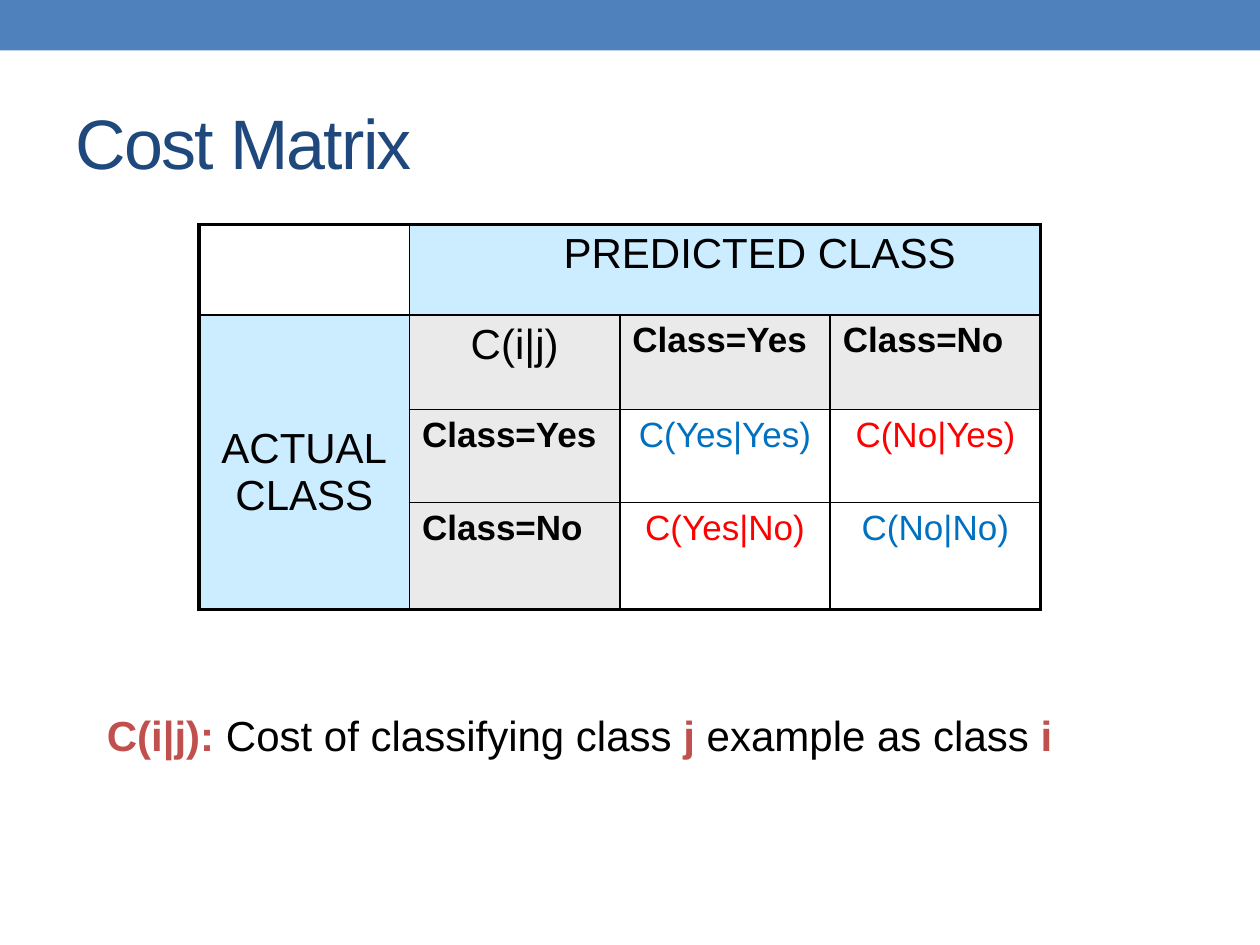
from lxml import etree
from pptx import Presentation
from pptx import util as u
from pptx.dml.color import RGBColor
from pptx.enum import shapes, text
from pptx.oxml import ns

BAND_BLUE = RGBColor(0x4F, 0x81, 0xBD)
TITLE_BLUE = RGBColor(0x1F, 0x49, 0x7D)
ACCENT_RED = RGBColor(0xC0, 0x50, 0x4D)
PALE_BLUE = RGBColor(0xCC, 0xEC, 0xFF)
PALE_GRAY = RGBColor(0xEA, 0xEA, 0xEA)
BLUE = RGBColor(0x00, 0x70, 0xC0)
RED = RGBColor(0xFF, 0x00, 0x00)
BLACK = RGBColor(0, 0, 0)
WHITE = RGBColor(0xFF, 0xFF, 0xFF)
CENTER = text.PP_ALIGN.CENTER
LEFT = text.PP_ALIGN.LEFT


class SlideBuilder:
    font = "Arial"
    inner_line = 1
    outer_line = 2.25

    def __init__(self, presentation):
        self.slide = presentation.slides.add_slide(presentation.slide_layouts[5])

    def box(self, left, top, width, height):
        return [u.Inches(value) for value in (left, top, width, height)]

    def run(self, paragraph, words, size, color=BLACK, bold=False):
        run = paragraph.add_run()
        run.text = words
        run.font.name = self.font
        run.font.size = u.Pt(size)
        run.font.bold = bold
        run.font.color.rgb = color
        return run

    def band(self, place, color):
        shape = self.slide.shapes.add_shape(shapes.MSO_SHAPE.RECTANGLE, *self.box(*place))
        shape.shadow.inherit = False
        shape.fill.solid()
        shape.fill.fore_color.rgb = color
        shape.line.fill.background()

    def title(self, words, place):
        shape = self.slide.shapes.title
        shape.left, shape.top, shape.width, shape.height = self.box(*place)
        shape.text_frame.vertical_anchor = text.MSO_ANCHOR.MIDDLE
        paragraph = shape.text_frame.paragraphs[0]
        paragraph.alignment = LEFT
        run = self.run(paragraph, words, 40, TITLE_BLUE)
        run.font._element.set("spc", "-100")

    def text_box(self, place, parts):
        shape = self.slide.shapes.add_textbox(*self.box(*place))
        shape.text_frame.word_wrap = True
        paragraph = shape.text_frame.paragraphs[0]
        for words, color, bold in parts:
            self.run(paragraph, words, 24, color, bold)

    def table(self, place, column_widths, row_heights):
        frame = self.slide.shapes.add_table(
            len(row_heights), len(column_widths), *self.box(*place))
        table = frame.table
        table.first_row = table.horz_banding = False
        for column, width in zip(table.columns, column_widths):
            column.width = u.Inches(width)
        for row, height in zip(table.rows, row_heights):
            row.height = u.Inches(height)
        return table

    def cell(self, cell, words="", fill=WHITE, size=20, color=BLACK, bold=False, align=CENTER):
        cell.fill.solid()
        cell.fill.fore_color.rgb = fill
        paragraph = cell.text_frame.paragraphs[0]
        paragraph.alignment = align
        paragraph.space_after = u.Pt(4)
        for index, line in enumerate(words.split("\n")):
            if index:
                paragraph.add_line_break()
            if line:
                self.run(paragraph, line, size, color, bold)

    def borders(self, table):
        last_row, last_column = len(table.rows), len(table.columns)
        for row in range(last_row):
            for column in range(last_column):
                cell = table.cell(row, column)
                outer = {
                    "lnL": column == 0,
                    "lnR": column + cell.span_width == last_column,
                    "lnT": row == 0,
                    "lnB": row + cell.span_height == last_row,
                }
                edges = [edge for edge in outer if outer[edge] or not cell.is_spanned]
                properties = cell._tc.get_or_add_tcPr()
                for index, edge in enumerate(edges):
                    width = self.outer_line if outer[edge] else self.inner_line
                    line = etree.Element(ns.qn(f"a:{edge}"), w=str(u.Pt(width)))
                    fill = etree.SubElement(line, ns.qn("a:solidFill"))
                    etree.SubElement(fill, ns.qn("a:srgbClr"), val=str(BLACK))
                    properties.insert(index, line)


def add_cost_matrix(builder):
    table = builder.table((1.58, 1.78, 6.67, 3.06), [1.67] * 4, [0.72, 0.75, 0.74, 0.85])
    predicted, actual = table.cell(0, 1), table.cell(1, 0)
    predicted.merge(table.cell(0, 3))
    actual.merge(table.cell(3, 0))
    builder.cell(table.cell(0, 0))
    builder.cell(predicted, "PREDICTED CLASS", PALE_BLUE, 24)
    predicted.margin_left = u.Inches(0.65)
    builder.cell(actual, "ACTUAL\nCLASS", PALE_BLUE, 24)
    actual.margin_top = u.Inches(0.88)
    builder.cell(table.cell(1, 1), "C(i|j)", PALE_GRAY, 24)
    labels = ["Yes", "No"]
    for i, label in enumerate(labels, start=2):
        for header in (table.cell(1, i), table.cell(i, 1)):
            builder.cell(header, f"Class={label}", PALE_GRAY, bold=True, align=LEFT)
        for j, predicted_label in enumerate(labels, start=2):
            builder.cell(table.cell(i, j), f"C({predicted_label}|{label})",
                         color=BLUE if i == j else RED)
    builder.borders(table)


def main():
    presentation = Presentation()
    presentation.slide_width = u.Inches(10)
    presentation.slide_height = u.Inches(7.5)
    builder = SlideBuilder(presentation)
    builder.band((0, 0, 10, 0.4), BAND_BLUE)
    builder.title("Cost Matrix", (0.5, 0.58, 9, 1.08))
    add_cost_matrix(builder)
    builder.text_box((0.75, 5.58, 8.58, 1), [
        ("C(i|j): ", ACCENT_RED, True),
        ("Cost of classifying class ", BLACK, False),
        ("j", ACCENT_RED, True),
        (" example as class ", BLACK, False),
        ("i", ACCENT_RED, True),
    ])
    presentation.save("out.pptx")


if __name__ == "__main__":
    main()
